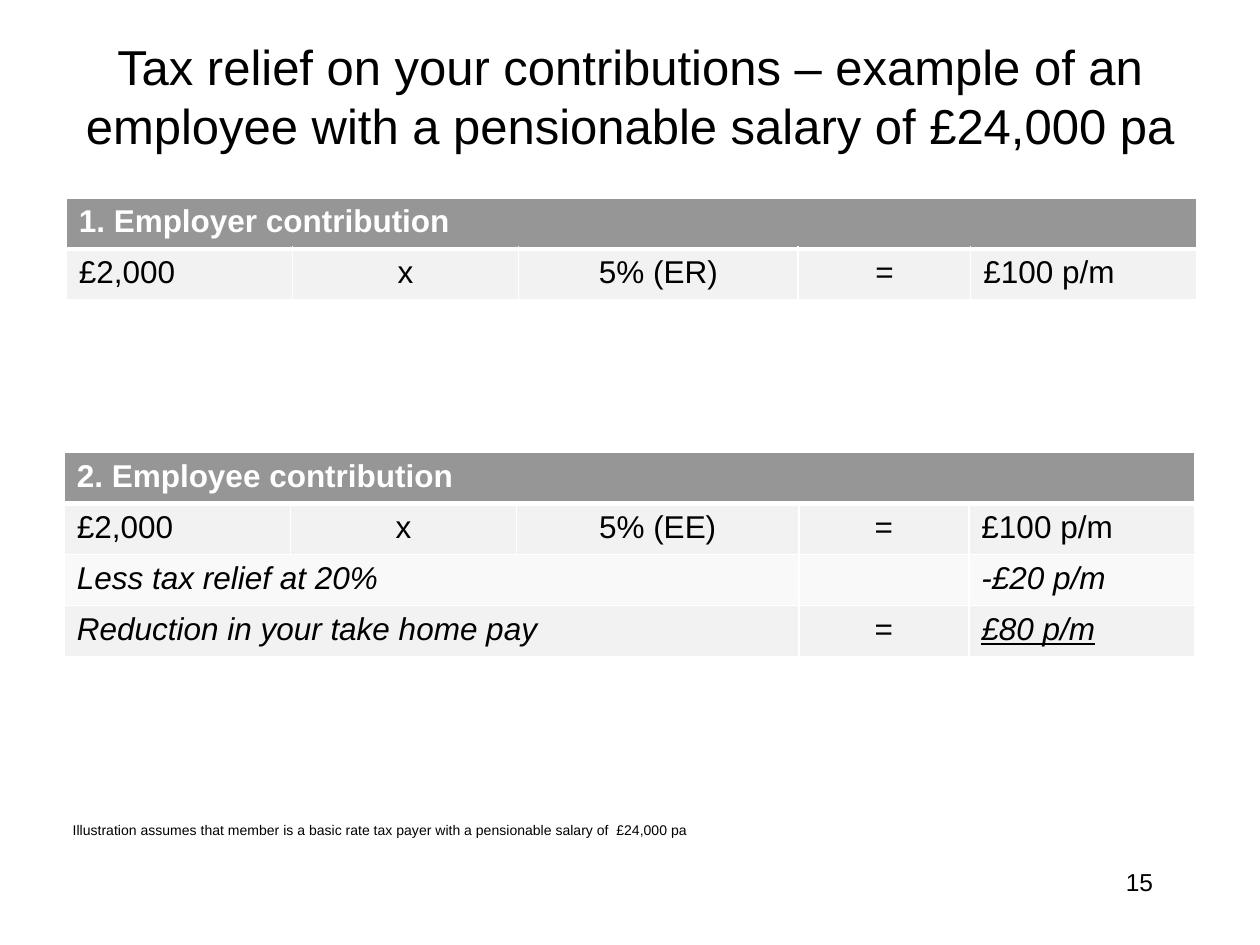
from lxml.etree import SubElement
from pptx import Presentation
from pptx.dml.color import RGBColor
from pptx.enum.text import MSO_ANCHOR as Anchor, PP_ALIGN as Align
from pptx.oxml.ns import qn
from pptx.util import Inches, Pt

COLS, ROWS = 100, 75
BLACK, WHITE, GREY = "000000", "FFFFFF", "969696"
BANDS = ("F2F2F2", "F9F9F9")


def rgb(value):
    return RGBColor.from_string(value)


class SlideBuilder:
    """Places elements on a grid of COLS by ROWS over the slide."""

    font = "Arial"
    table_size = 18

    def __init__(self, prs):
        self.prs = prs
        self.s = prs.slides.add_slide(prs.slide_layouts[6])

    def x(self, cols):
        return round(self.prs.slide_width * cols / COLS)

    def y(self, rows):
        return round(self.prs.slide_height * rows / ROWS)

    def style(self, p, size, color=BLACK, align=Align.LEFT, bold=False,
              italic=False, underline=False):
        p.alignment = align
        f = p.font
        f.name, f.size, f.color.rgb = self.font, Pt(size), rgb(color)
        f.bold, f.italic, f.underline = bold, italic, underline

    def text(self, text, left, top, width, height, size, align,
             anchor=Anchor.TOP, inset=True):
        sp = self.s.shapes.add_textbox(self.x(left), self.y(top),
                                       self.x(width), self.y(height))
        tf = sp.text_frame
        tf.word_wrap, tf.vertical_anchor = True, anchor
        if not inset:
            tf.margin_left = tf.margin_right = 0
            tf.margin_top = tf.margin_bottom = 0
        p = tf.paragraphs[0]
        p.text = text
        self.style(p, size, align=align)

    def borders(self, cell, row):
        """White rules, thicker between the header and the body."""
        tc_pr = cell._tc.get_or_add_tcPr()
        widths = {"L": 1, "R": 1, "T": 3 if row == 1 else 1,
                  "B": 3 if row == 0 else 1}
        for side, width in widths.items():
            ln = SubElement(tc_pr, qn(f"a:ln{side}"), w=str(Pt(width)))
            fill = SubElement(ln, qn("a:solidFill"))
            SubElement(fill, qn("a:srgbClr"), val=WHITE)

    def table(self, header, body, left, top, widths, row_height=4.05):
        """Draw a header over body rows; None continues the cell to its left."""
        last = len(widths) - 1
        rows = [[header] + [None] * last] + body
        table = self.s.shapes.add_table(
            len(rows), len(widths), self.x(left), self.y(top),
            self.x(sum(widths)), self.y(row_height * len(rows))).table
        for column, width in zip(table.columns, widths):
            column.width = self.x(width)
        for i, row in enumerate(rows):
            table.rows[i].height = self.y(row_height)
            for j, value in enumerate(row):
                cell = table.cell(i, j)
                self.borders(cell, i)
                cell.fill.solid()
                cell.fill.fore_color.rgb = rgb(BANDS[(i - 1) % 2] if i else GREY)
                p = cell.text_frame.paragraphs[0]
                p.text = value or ""
                self.style(p, self.table_size, BLACK if i else WHITE,
                           Align.CENTER if 0 < j < last else Align.LEFT,
                           bold=i == 0, italic=i > 1 and j in (0, last),
                           underline=i == 3 and j == last)
            span = row.count(None)
            if span:
                table.cell(i, 0).merge(table.cell(i, span))


def main():
    prs = Presentation()
    prs.slide_width, prs.slide_height = Inches(10), Inches(7.5)
    b = SlideBuilder(prs)
    b.text("Tax relief on your contributions – example of an employee with "
           "a pensionable salary of £24,000 pa",
           5.2, 1.3, 89.6, 12.6, 28, Align.CENTER, Anchor.MIDDLE)
    b.table("1. Employer contribution",
            [["£2,000", "x", "5% (ER)", "=", "£100 p/m"]],
            5.25, 15.7, (17.95, 17.95, 22.2, 13.7, 17.95))
    b.table("2. Employee contribution",
            [["£2,000", "x", "5% (EE)", "=", "£100 p/m"],
             ["Less tax relief at 20%", None, None, "", "-£20 p/m"],
             ["Reduction in your take home pay", None, None, "=", "£80 p/m"]],
            5.1, 35.9, (17.95, 17.95, 22.4, 13.5, 17.95))
    b.text("Illustration assumes that member is a basic rate tax payer with "
           "a pensionable salary of  £24,000 pa",
           5, 65.2, 50.4, 3.1, 8, Align.CENTER, inset=False)
    b.text("15", 71.7, 68.3, 20.8, 5, 14, Align.RIGHT)
    prs.save("out.pptx")


if __name__ == "__main__":
    main()
